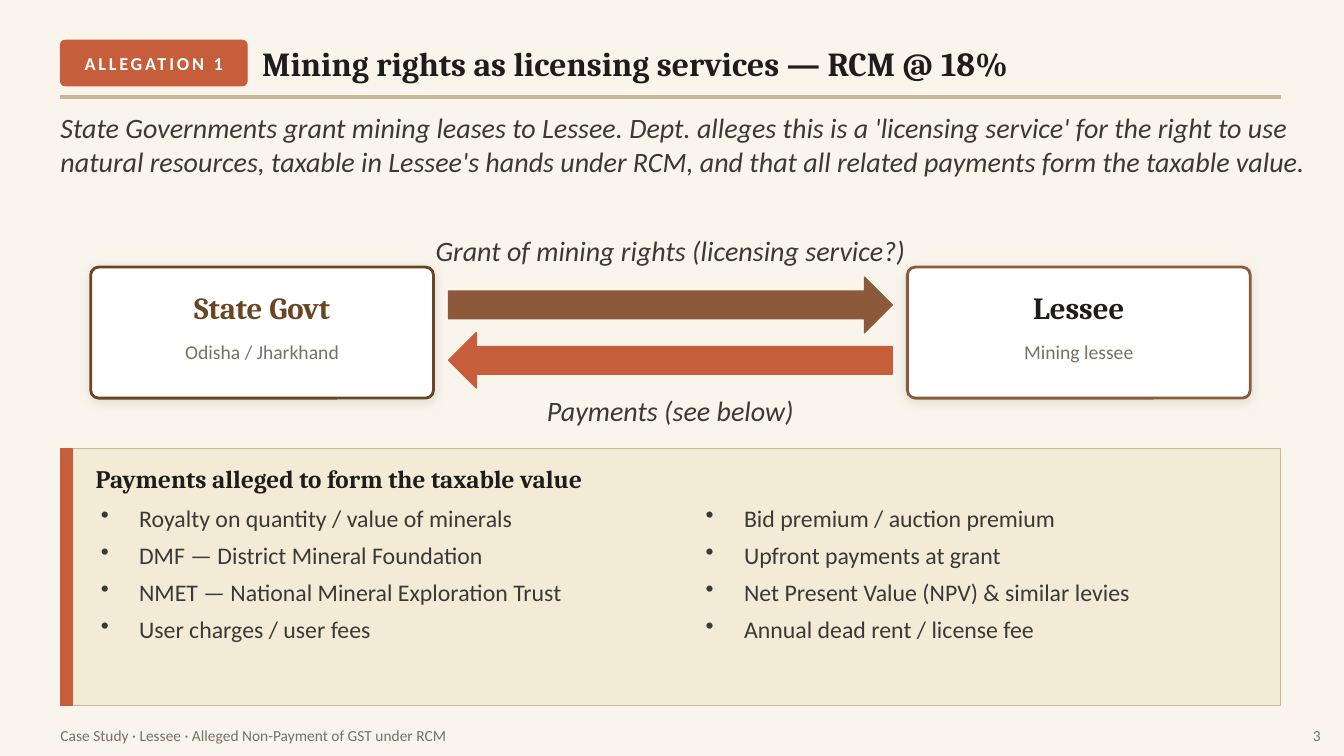
from lxml.etree import SubElement
from pptx import Presentation
from pptx.dml.color import RGBColor
from pptx.enum.shapes import MSO_SHAPE as SHAPE
from pptx.enum.text import MSO_ANCHOR as ANCHOR, PP_ALIGN as ALIGN
from pptx.oxml.ns import qn
from pptx.util import Inches, Pt

CREAM = RGBColor(0xFA, 0xF5, 0xEC)
SAND = RGBColor(0xF4, 0xEB, 0xD7)
TAN = RGBColor(0xC9, 0xB8, 0x94)
RUST = RGBColor(0xC6, 0x5D, 0x3B)
BROWN = RGBColor(0x8C, 0x5A, 0x3A)
DARK_BROWN = RGBColor(0x6B, 0x44, 0x23)
INK = RGBColor(0x1F, 0x1D, 0x1B)
BODY = RGBColor(0x3A, 0x39, 0x36)
MUTED = RGBColor(0x7A, 0x6F, 0x62)
WHITE = RGBColor(0xFF, 0xFF, 0xFF)

LEFT, CONTENT_WIDTH = 0.6, 12.1
HEADING = dict(font="Cambria", color=INK, bold=True, anchor=ANCHOR.MIDDLE)
STATEMENT = dict(size=20, italic=True)
FOOTER = dict(size=11, color=MUTED, anchor=ANCHOR.MIDDLE)

PAYMENTS = [
    (1, 5.8, ["Royalty on quantity / value of minerals",
              "DMF — District Mineral Foundation",
              "NMET — National Mineral Exploration Trust",
              "User charges / user fees"]),
    (7, 5.7, ["Bid premium / auction premium",
              "Upfront payments at grant",
              "Net Present Value (NPV) & similar levies",
              "Annual dead rent / license fee"]),
]


def add_bullet(paragraph):
    props = paragraph._p.get_or_add_pPr()
    props.set("marL", str(Inches(0.38)))
    props.set("indent", str(-Inches(0.38)))
    SubElement(props, qn("a:buChar"), char="•")


def write(holder, lines, *, size, font="Calibri", color=BODY, bold=False,
          italic=False, align=ALIGN.LEFT, anchor=ANCHOR.TOP, spacing=0,
          bullets=False, after=0):
    """Fill a shape's text frame with one paragraph per line."""
    frame = holder.text_frame
    frame.word_wrap = True
    frame.vertical_anchor = anchor
    frame.margin_left = frame.margin_right = 0
    frame.margin_top = frame.margin_bottom = 0
    for index, line in enumerate(lines):
        paragraph = frame.add_paragraph() if index else frame.paragraphs[0]
        if bullets:
            add_bullet(paragraph)
        paragraph.alignment = align
        paragraph.space_after = Pt(after)
        run = paragraph.add_run()
        run.text = line
        run.font.name, run.font.size = font, Pt(size)
        run.font.bold, run.font.italic = bold, italic
        run.font.color.rgb = color
        if spacing:
            run._r.get_or_add_rPr().set("spc", str(spacing * 100))


def add_text(slide, lines, left, top, width, height, **style):
    box = slide.shapes.add_textbox(*map(Inches, (left, top, width, height)))
    write(box, lines, **style)


def add_block(slide, kind, left, top, width, height, fill, line=None,
              line_width=1, corner=None):
    block = slide.shapes.add_shape(
        kind, *map(Inches, (left, top, width, height)))
    block.shadow.inherit = False
    block.fill.solid()
    block.fill.fore_color.rgb = fill
    block.line.color.rgb = line or fill
    block.line.width = Pt(line_width)
    if corner is not None:
        block.adjustments[0] = corner
    return block


def add_soft_shadow(block):
    effects = block._element.spPr.find(qn("a:effectLst"))
    shadow = SubElement(effects, qn("a:outerShdw"), blurRad=str(Pt(8)),
                        dist=str(Pt(2)), dir="5400000", algn="ctr",
                        rotWithShape="0")
    black = SubElement(shadow, qn("a:srgbClr"), val="000000")
    SubElement(black, qn("a:alpha"), val="10000")


def add_party(slide, left, name, role, border, name_color):
    card = add_block(slide, SHAPE.ROUNDED_RECTANGLE, left, 2.65, 3.4, 1.3,
                     WHITE, border, line_width=2, corner=0.06)
    add_soft_shadow(card)
    add_text(slide, [name], left + 0.1, 2.77, 3.2, 0.55, size=22,
             align=ALIGN.CENTER, **{**HEADING, "color": name_color})
    add_text(slide, [role], left + 0.1, 3.37, 3.2, 0.52, size=14,
             color=MUTED, align=ALIGN.CENTER)


def add_header(slide):
    badge = add_block(slide, SHAPE.ROUNDED_RECTANGLE, LEFT, 0.4, 1.85, 0.45,
                      RUST, corner=0.11)
    write(badge, ["ALLEGATION 1"], size=13, color=WHITE, bold=True,
          align=ALIGN.CENTER, anchor=ANCHOR.MIDDLE, spacing=2)
    title = slide.shapes.title
    title.left, title.top = Inches(2.6), Inches(0.35)
    title.width, title.height = Inches(10.5), Inches(0.55)
    write(title, ["Mining rights as licensing services — RCM @ 18%"],
          size=24, **HEADING)
    add_block(slide, SHAPE.RECTANGLE, LEFT, 0.95, CONTENT_WIDTH, 0.03, TAN)
    add_text(slide, [
        "State Governments grant mining leases to Lessee. Dept. alleges this "
        "is a 'licensing service' for the right to use natural resources, "
        "taxable in Lessee's hands under RCM, and that all related payments "
        "form the taxable value."], LEFT, 1.1, 12.7, 1.25, **STATEMENT)


def add_exchange(slide):
    add_party(slide, 0.9, "State Govt", "Odisha / Jharkhand",
              DARK_BROWN, DARK_BROWN)
    add_party(slide, 9, "Lessee", "Mining lessee", BROWN, INK)
    add_block(slide, SHAPE.RIGHT_ARROW, 4.45, 2.75, 4.4, 0.55, BROWN)
    add_block(slide, SHAPE.LEFT_ARROW, 4.45, 3.3, 4.4, 0.55, RUST)
    add_text(slide, ["Grant of mining rights (licensing service?)"],
             4.15, 2.15, 5, 0.5, align=ALIGN.CENTER, anchor=ANCHOR.BOTTOM,
             **STATEMENT)
    add_text(slide, ["Payments (see below)"], 4.15, 3.9, 5, 0.45,
             align=ALIGN.CENTER, **STATEMENT)


def add_payments(slide):
    top, height = 4.45, 2.55
    add_block(slide, SHAPE.RECTANGLE, LEFT, top, CONTENT_WIDTH, height,
              SAND, TAN)
    add_block(slide, SHAPE.RECTANGLE, LEFT, top, 0.12, height, RUST)
    add_text(slide, ["Payments alleged to form the taxable value"],
             0.95, 4.55, 12, 0.4, size=18, **HEADING)
    for left, width, items in PAYMENTS:
        add_text(slide, items, left, 5, width, 1.9, size=17, bullets=True,
                 after=6)


def main():
    deck = Presentation()
    deck.slide_width, deck.slide_height = Inches(13.33), Inches(7.5)
    slide = deck.slides.add_slide(deck.slide_layouts[5])
    slide.background.fill.solid()
    slide.background.fill.fore_color.rgb = CREAM

    add_header(slide)
    add_exchange(slide)
    add_payments(slide)

    # Footer and page number
    add_text(slide,
             ["Case Study · Lessee · Alleged Non-Payment of GST under RCM"],
             LEFT, 7.15, 11, 0.3, **FOOTER)
    add_text(slide, ["3"], 12.6, 7.15, 0.5, 0.3, align=ALIGN.RIGHT, **FOOTER)
    deck.save("out.pptx")


if __name__ == "__main__":
    main()
